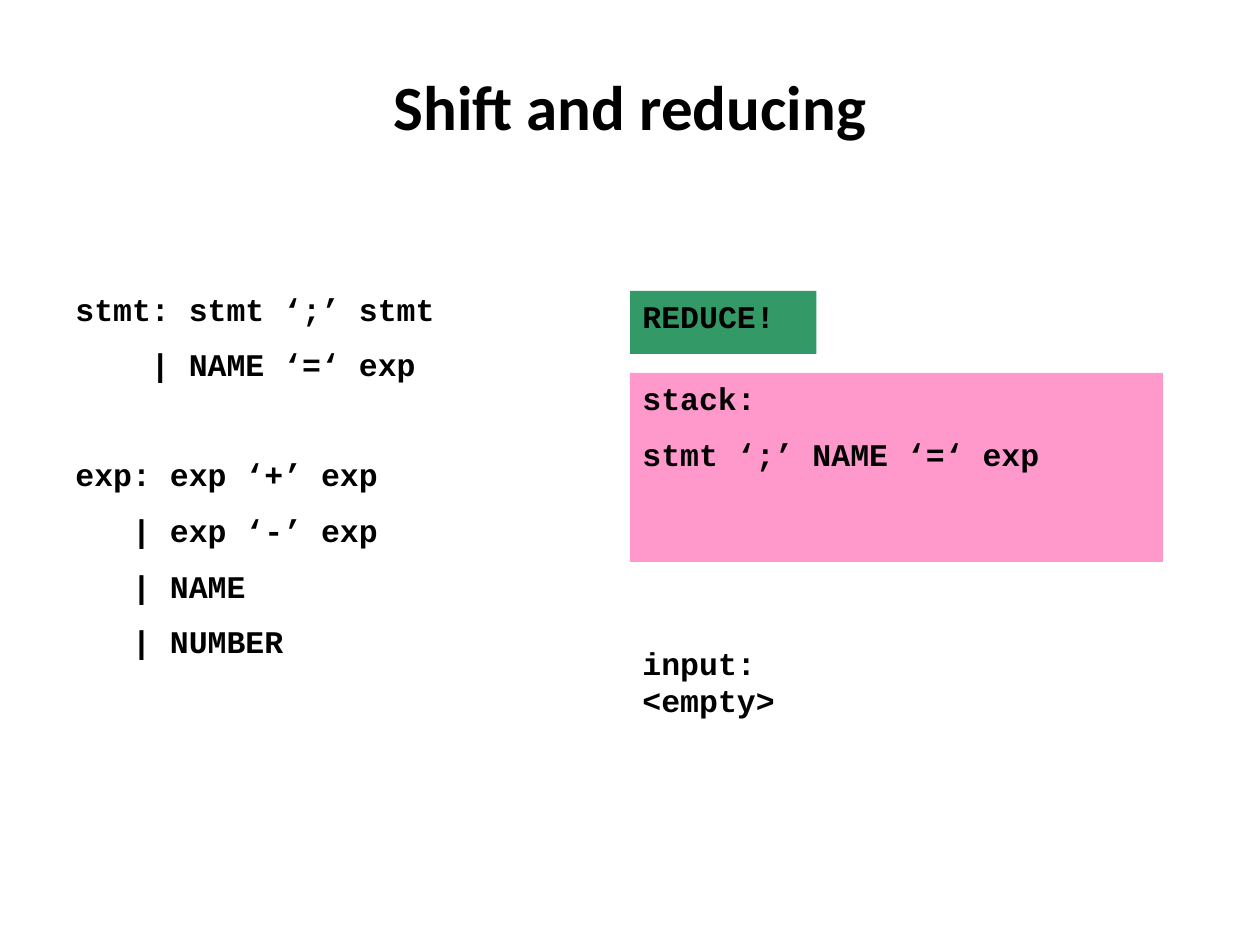
from pptx import Presentation
from pptx.dml.color import RGBColor
from pptx.enum.shapes import MSO_SHAPE
from pptx.enum.text import MSO_ANCHOR, PP_ALIGN
from pptx.util import Inches, Pt

THEME = {
    "text": RGBColor.from_string("000000"),
    "stack": RGBColor.from_string("FF99CC"),
    "action": RGBColor.from_string("339966"),
    "title_font": {"name": "Calibri", "size": Pt(36), "bold": True},
    "code_font": {"name": "Courier New", "size": Pt(18), "bold": True},
}
CHAR = 0.15  # width of one code character, inches
GAP = 10.25  # space between code lines, points
RULE_GAP = 41  # space between grammar rules, points


def add_run(p, text, font):
    r = p.add_run()
    r.text = text
    for name, value in font.items():
        setattr(r.font, name, value)
    r.font.color.rgb = THEME["text"]


def write_code(s, lines):
    """Each line is (text, indent in characters, space before in points)."""
    tf = s.text_frame
    tf.word_wrap = True
    tf.vertical_anchor = MSO_ANCHOR.TOP
    for i, (text, indent, gap) in enumerate(lines):
        p = tf.add_paragraph() if i else tf.paragraphs[0]
        p.alignment = PP_ALIGN.LEFT
        p.space_before = Pt(gap)
        if indent:
            p._p.get_or_add_pPr().set("marL", str(Inches(indent * CHAR)))
        add_run(p, text, THEME["code_font"])


prs = Presentation()
prs.slide_width, prs.slide_height = Inches(10), Inches(7.5)
slide = prs.slides.add_slide(prs.slide_layouts[5])

# Title
title = slide.shapes.title
title.left, title.top = Inches(0.5), Inches(0.3)
title.width, title.height = Inches(9), Inches(1.07)
title.text_frame.vertical_anchor = MSO_ANCHOR.MIDDLE
p = title.text_frame.paragraphs[0]
p.alignment = PP_ALIGN.CENTER
add_run(p, "Shift and reducing", THEME["title_font"])

# Grammar and remaining input
texts = [
    ((0.5, 2.25, 4.06, 4.09), [
        ("stmt: stmt ‘;’ stmt", 0, 0),
        ("| NAME ‘=‘ exp", 4, GAP),
        ("exp: exp ‘+’ exp", 0, RULE_GAP),
        ("| exp ‘-’ exp", 3, GAP),
        ("| NAME", 3, GAP),
        ("| NUMBER", 3, GAP),
    ]),
    ((5, 5.06, 1.48, 0.9), [("input:", 0, 0), ("<empty>", 0, 0)]),
]
for box, lines in texts:
    s = slide.shapes.add_textbox(*map(Inches, box))
    write_code(s, lines)

# Parser stack and current action
panels = [
    ((5, 2.96, 4.23, 1.5), "stack",
     [("stack:", 0, 0), ("stmt ‘;’ NAME ‘=‘ exp", 0, GAP)]),
    ((5, 2.31, 1.48, 0.5), "action", [("REDUCE!", 0, 0)]),
]
for box, fill, lines in panels:
    s = slide.shapes.add_shape(MSO_SHAPE.RECTANGLE, *map(Inches, box))
    s.shadow.inherit = False
    s.fill.solid()
    s.fill.fore_color.rgb = THEME[fill]
    s.line.fill.background()
    write_code(s, lines)

prs.save("out.pptx")
